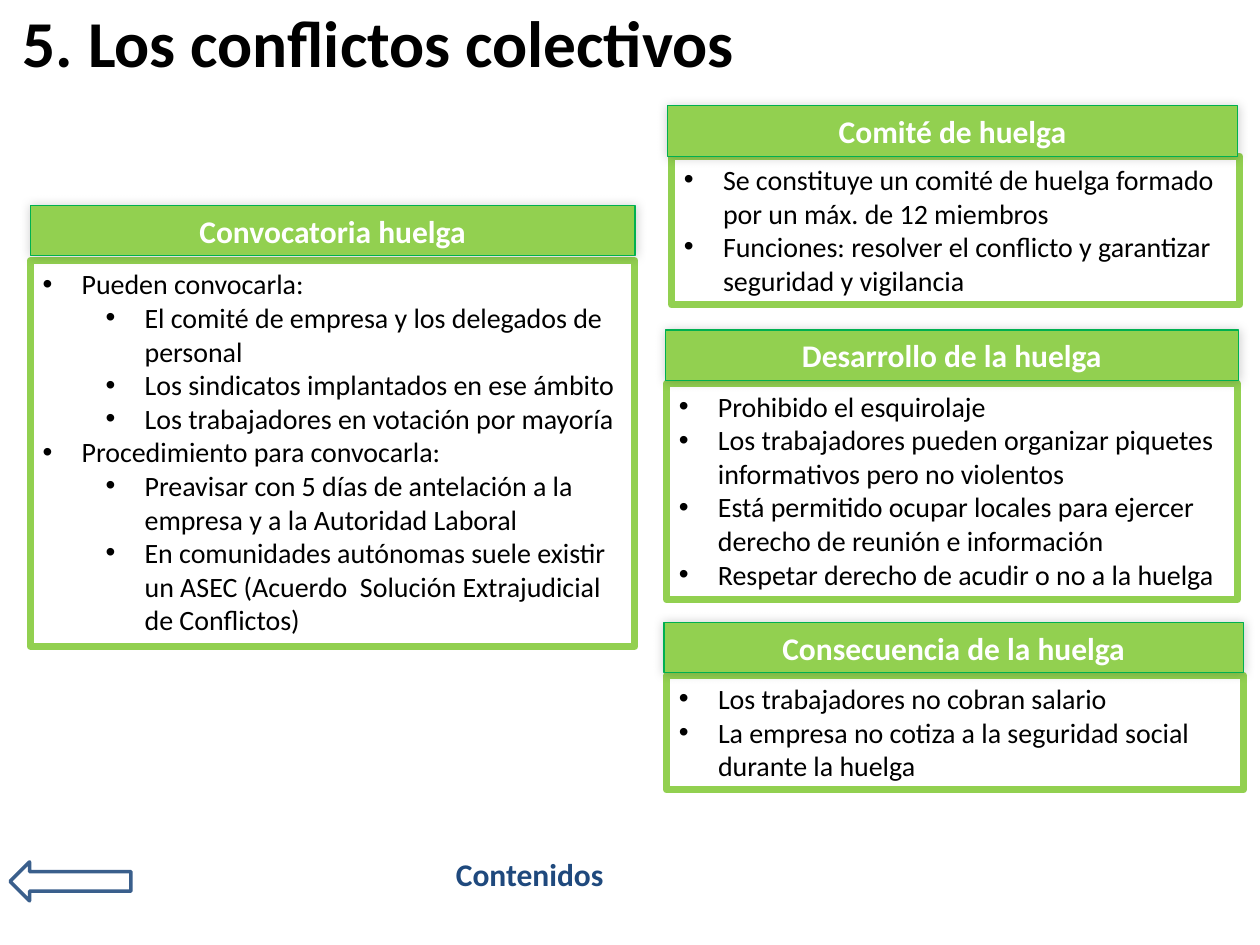
from dataclasses import dataclass

from lxml import etree
from pptx import Presentation
from pptx.dml.color import RGBColor
from pptx.enum import shapes, text
from pptx.oxml import ns
from pptx.util import Inches, Pt


@dataclass(frozen=True)
class Theme:
    font: str = "Calibri"
    ink: str = "000000"
    white: str = "FFFFFF"
    green: str = "92D050"
    edge: str = "00B050"
    navy: str = "1F497D"
    arrow: str = "3A5F8C"
    title: float = 37.4
    head: float = 18
    body: float = 16


class Deck:
    def __init__(self, theme):
        self.t = theme
        self.prs = Presentation()
        self.prs.slide_width, self.prs.slide_height = Inches(10), Inches(7.5)
        self.s = self.prs.slides.add_slide(self.prs.slide_layouts[5])

    def run(self, p, words, size, color, bold=False):
        r = p.add_run()
        r.text = words
        r.font.name, r.font.size, r.font.bold = self.t.font, Pt(size), bold
        r.font.color.rgb = RGBColor.from_string(color)

    def title(self, words, box):
        sp = self.s.shapes.title
        sp.left, sp.top, sp.width, sp.height = map(Inches, box)
        tf = sp.text_frame
        tf.auto_size = text.MSO_AUTO_SIZE.NONE
        tf.vertical_anchor = text.MSO_ANCHOR.MIDDLE
        p = tf.paragraphs[0]
        p.alignment = text.PP_ALIGN.LEFT
        self.run(p, words, self.t.title, self.t.ink, bold=True)

    def label(self, words, box):
        tf = self.s.shapes.add_textbox(*map(Inches, box)).text_frame
        tf.word_wrap = True
        self.run(tf.paragraphs[0], words, self.t.head, self.t.navy, bold=True)

    def shape(self, kind, box, line, weight, fill=None):
        sp = self.s.shapes.add_shape(kind, *map(Inches, box))
        sp.shadow.inherit = False
        if fill:
            sp.fill.solid()
            sp.fill.fore_color.rgb = RGBColor.from_string(fill)
        else:
            sp.fill.background()
        sp.line.color.rgb = RGBColor.from_string(line)
        sp.line.width = Pt(weight)
        sp.text_frame.word_wrap = True
        sp.text_frame.vertical_anchor = text.MSO_ANCHOR.TOP
        return sp

    def header(self, words, box):
        sp = self.shape(shapes.MSO_SHAPE.RECTANGLE, box, self.t.edge, 0.75, self.t.green)
        self.soft_shadow(sp)
        p = sp.text_frame.paragraphs[0]
        p.alignment = text.PP_ALIGN.CENTER
        self.run(p, words, self.t.head, self.t.white, bold=True)

    def soft_shadow(self, sp):
        effects = sp._element.spPr.find(ns.qn("a:effectLst"))
        shadow = etree.SubElement(effects, ns.qn("a:outerShdw"), blurRad=str(Pt(6)),
                                  dist="0", dir="13500000", rotWithShape="0")
        color = etree.SubElement(shadow, ns.qn("a:srgbClr"), val=self.t.ink)
        etree.SubElement(color, ns.qn("a:alpha"), val="20000")

    def bullets(self, items, box):
        sp = self.shape(shapes.MSO_SHAPE.RECTANGLE, box, self.t.green, 4)
        tf = sp.text_frame
        for i, (level, words) in enumerate(items):
            p = tf.add_paragraph() if i else tf.paragraphs[0]
            p.level = level
            p.alignment = text.PP_ALIGN.LEFT
            pPr = p._p.get_or_add_pPr()
            pPr.set("marL", str(Inches(0.31 + 0.5 * level)))
            pPr.set("indent", str(Inches(-0.31)))
            etree.SubElement(pPr, ns.qn("a:buFont"), typeface="Arial")
            etree.SubElement(pPr, ns.qn("a:buChar"), char="•")
            self.run(p, words, self.t.body, self.t.ink)


# Each panel: heading, heading box, body box, (level, text) items
PANELS = [
    ("Convocatoria huelga", (0.24, 1.63, 4.8, 0.4), (0.24, 2.07, 4.8, 3.06), [
        (0, "Pueden convocarla:"),
        (1, "El comité de empresa y los delegados de personal"),
        (1, "Los sindicatos implantados en ese ámbito"),
        (1, "Los trabajadores en votación por mayoría"),
        (0, "Procedimiento para convocarla:"),
        (1, "Preavisar con 5 días de antelación a la empresa y a la Autoridad Laboral"),
        (1, "En comunidades autónomas suele existir un ASEC "
            "(Acuerdo  Solución Extrajudicial de Conflictos)"),
    ]),
    ("Comité de huelga", (5.3, 0.84, 4.52, 0.4), (5.33, 1.24, 4.51, 1.18), [
        (0, "Se constituye un comité de huelga formado por un máx. de 12 miembros"),
        (0, "Funciones: resolver el conflicto y garantizar seguridad y vigilancia"),
    ]),
    ("Desarrollo de la huelga", (5.28, 2.62, 4.55, 0.4), (5.29, 3.04, 4.53, 1.72), [
        (0, "Prohibido el esquirolaje"),
        (0, "Los trabajadores pueden organizar piquetes informativos pero no violentos"),
        (0, "Está permitido ocupar locales para ejercer derecho de reunión e información"),
        (0, "Respetar derecho de acudir o no a la huelga"),
    ]),
    ("Consecuencia de la huelga", (5.27, 4.94, 4.6, 0.4), (5.29, 5.36, 4.58, 0.91), [
        (0, "Los trabajadores no cobran salario"),
        (0, "La empresa no cotiza a la seguridad social durante la huelga"),
    ]),
]


def main():
    deck = Deck(Theme())

    # Title and navigation
    deck.title("5. Los conflictos colectivos", (0.08, 0.01, 9.92, 0.63))
    deck.label("Contenidos", (3.52, 6.74, 1.44, 0.4))
    deck.shape(shapes.MSO_SHAPE.LEFT_ARROW, (0.08, 6.84, 0.96, 0.31), deck.t.arrow, 2)

    # Panels, with each heading above its frame
    for heading, head_box, body_box, items in PANELS:
        deck.bullets(items, body_box)
        deck.header(heading, head_box)

    deck.prs.save("out.pptx")


if __name__ == "__main__":
    main()
